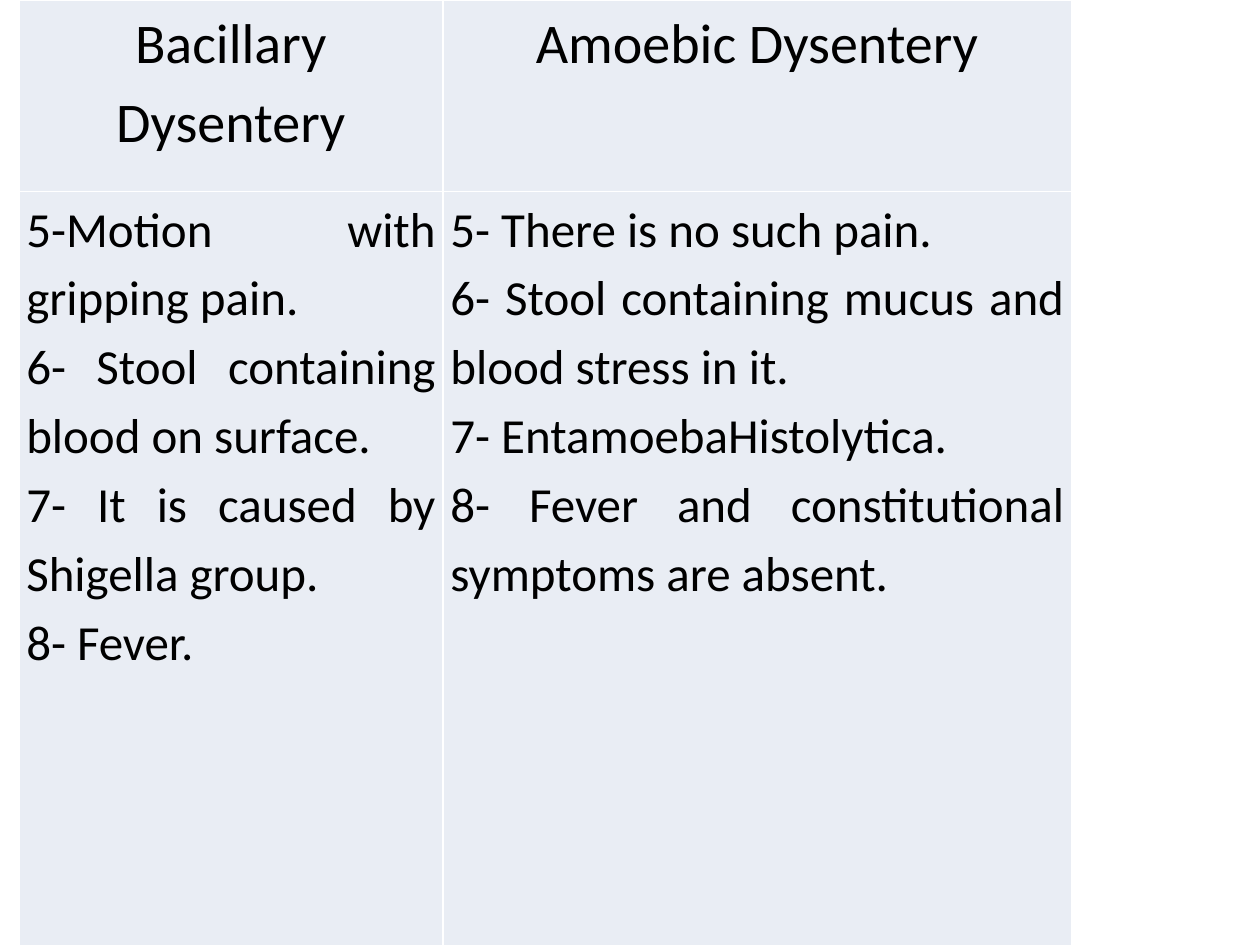
from lxml import etree
from pptx import Presentation
from pptx.dml.color import RGBColor
from pptx.enum.text import PP_ALIGN
from pptx.oxml.ns import qn
from pptx.util import Cm, Pt

CENTER = PP_ALIGN.CENTER
JUSTIFY = PP_ALIGN.JUSTIFY

FONT = "Calibri"
TEXT_COLOR = "000000"
CELL_COLOR = "E9EDF4"
BORDER_COLOR = "FFFFFF"

COLUMN_WIDTHS = [8.55, 12.67]
ROW_HEIGHTS = [3.86, 16.1]

HEADINGS = ["Bacillary Dysentery", "Amoebic Dysentery"]
FEATURES = [
    [
        "5-Motion with gripping pain.",
        "6- Stool containing blood on surface.",
        "7- It is caused by Shigella group.",
        "8- Fever.",
    ],
    [
        "5- There is no such pain.",
        "6- Stool containing mucus and blood stress in it.",
        "7- EntamoebaHistolytica.",
        "8- Fever and constitutional symptoms are absent.",
    ],
]


def color(hex_string):
    return RGBColor.from_string(hex_string)


def add_borders(cell):
    """Draw a thin line on all four sides; call before filling the cell."""
    properties = cell._tc.get_or_add_tcPr()
    for side in ("a:lnL", "a:lnR", "a:lnT", "a:lnB"):
        line = etree.SubElement(properties, qn(side), w=str(Pt(1)))
        fill = etree.SubElement(line, qn("a:solidFill"))
        etree.SubElement(fill, qn("a:srgbClr"), val=BORDER_COLOR)


def style_cell(cell):
    cell.margin_left = cell.margin_right = Cm(0.15)
    cell.margin_top = cell.margin_bottom = 0
    add_borders(cell)
    cell.fill.solid()
    cell.fill.fore_color.rgb = color(CELL_COLOR)


def write_cell(cell, lines, size, alignment):
    style_cell(cell)
    frame = cell.text_frame
    for index, line in enumerate(lines):
        paragraph = frame.add_paragraph() if index else frame.paragraphs[0]
        paragraph.alignment = alignment
        paragraph.line_spacing = 1.15
        run = paragraph.add_run()
        run.text = line
        run.font.name = FONT
        run.font.size = Pt(size)
        run.font.color.rgb = color(TEXT_COLOR)


def add_comparison(slide):
    comparison = slide.shapes.add_table(
        len(ROW_HEIGHTS), len(COLUMN_WIDTHS), Cm(0.38), Cm(0),
        Cm(sum(COLUMN_WIDTHS)), Cm(sum(ROW_HEIGHTS))).table
    comparison.first_row = False
    comparison.horz_banding = False
    for column, width in zip(comparison.columns, COLUMN_WIDTHS):
        column.width = Cm(width)
    for row, height in zip(comparison.rows, ROW_HEIGHTS):
        row.height = Cm(height)

    # One column per disease: heading above its features
    for index, (heading, features) in enumerate(zip(HEADINGS, FEATURES)):
        write_cell(comparison.cell(0, index), [heading], 32, CENTER)
        write_cell(comparison.cell(1, index), features, 28, JUSTIFY)


def main():
    deck = Presentation()
    deck.slide_width, deck.slide_height = Cm(25.4), Cm(19.05)
    slide = deck.slides.add_slide(deck.slide_layouts[6])
    add_comparison(slide)
    deck.save("out.pptx")


if __name__ == "__main__":
    main()
